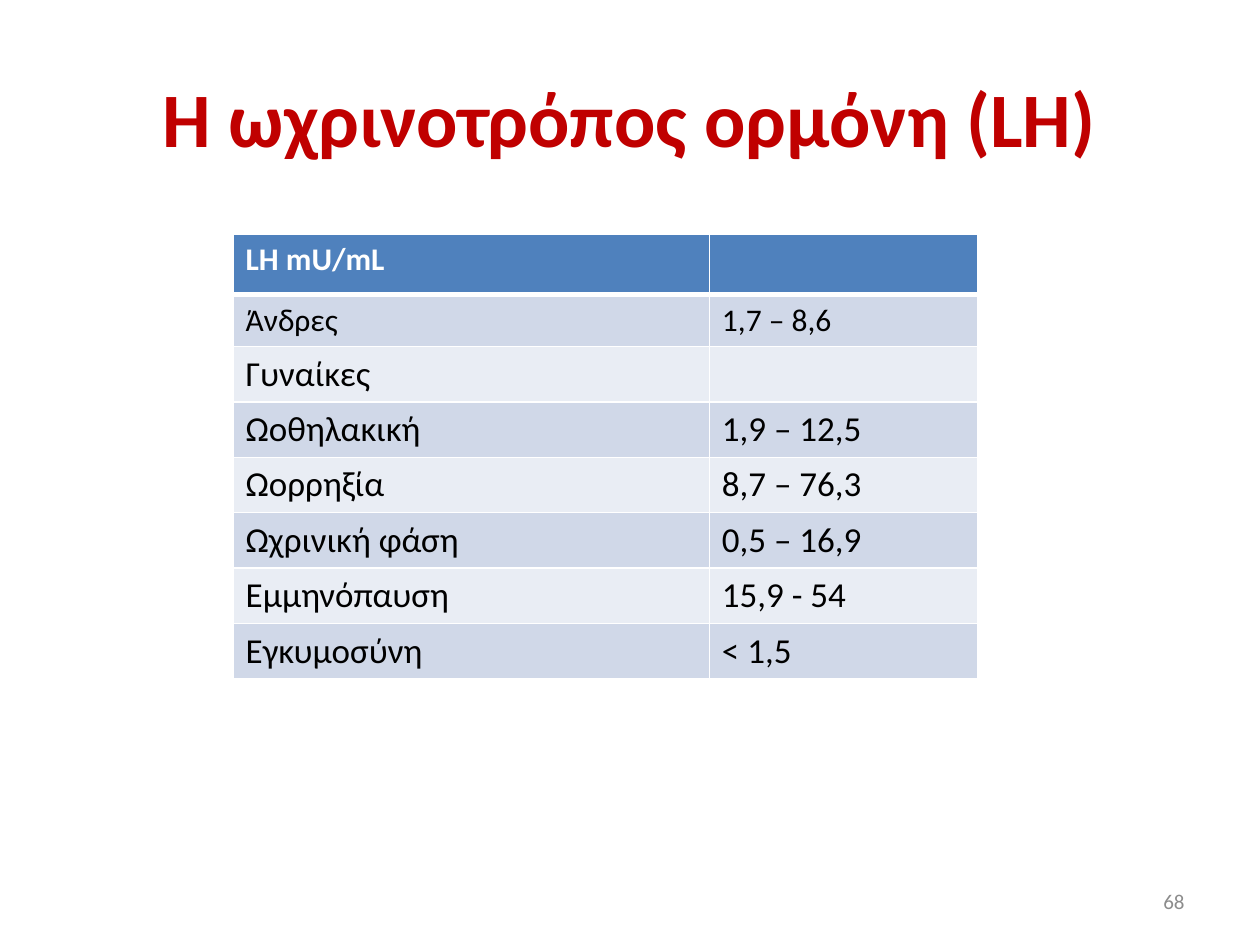
"""Build a slide with a table of LH reference values."""
from dataclasses import dataclass

from lxml.etree import SubElement
from pptx import Presentation
from pptx.dml.color import RGBColor
from pptx.enum.text import MSO_ANCHOR, PP_ALIGN
from pptx.oxml.ns import qn
from pptx.util import Inches, Pt

WIDTH, HEIGHT = Inches(10), Inches(7.5)
COLUMN_WIDTHS = (3.78, 2.13)
BANDS = ("E9EDF4", "D0D8E8")
HEADER_FILL, WHITE, BLACK = "4F81BD", "FFFFFF", "000000"


@dataclass(frozen=True)
class Row:
    label: str
    value: str = ""
    size: int = 20
    height: float = 0.44


ROWS = (
    Row("LH mU/mL", size=18, height=0.48),
    Row("Άνδρες", "1,7 – 8,6", size=18, height=0.41),
    Row("Γυναίκες"),
    Row("Ωοθηλακική", "1,9 – 12,5"),
    Row("Ωορρηξία", "8,7 – 76,3"),
    Row("Ωχρινική φάση", "0,5 – 16,9"),
    Row("Εμμηνόπαυση", "15,9 - 54"),
    Row("Εγκυμοσύνη", "< 1,5"),
)


def rgb(code: str) -> RGBColor:
    return RGBColor.from_string(code)


def write(frame, text: str, size: int, color: str, bold: bool = False, align=PP_ALIGN.LEFT) -> None:
    para = frame.paragraphs[0]
    para.alignment = align
    target = para.font
    if text:
        span = para.add_run()
        span.text = text
        target = span.font
    for name, value in {"name": "Calibri", "size": Pt(size), "bold": bold}.items():
        setattr(target, name, value)
    target.color.rgb = rgb(color)


def place(shape, left: float, top: float, width: float, height: float) -> None:
    geometry = {"left": left * WIDTH, "top": top * HEIGHT, "width": width * WIDTH, "height": height * HEIGHT}
    for name, value in geometry.items():
        setattr(shape, name, round(value))


def add_borders(cell, points: dict[str, int]) -> None:
    properties = cell._tc.get_or_add_tcPr()
    for position, (side, weight) in enumerate(points.items()):
        line = SubElement(properties, qn(f"a:ln{side}"), w=str(Pt(weight)))
        fill = SubElement(line, qn("a:solidFill"))
        SubElement(fill, qn("a:srgbClr"), val=WHITE)
        properties.insert(position, line)


def add_values(page) -> None:
    total = sum(row.height for row in ROWS)
    table = page.shapes.add_table(
        len(ROWS), len(COLUMN_WIDTHS), Inches(1.85), Inches(1.86),
        Inches(sum(COLUMN_WIDTHS)), Inches(total),
    ).table
    for column, width in zip(table.columns, COLUMN_WIDTHS):
        column.width = Inches(width)
    for index, row in enumerate(ROWS):
        table.rows[index].height = Inches(row.height)
        header = index == 0
        borders = {"L": 1, "R": 1, "T": 3 if index == 1 else 1, "B": 3 if header else 1}
        for cell, text in zip(table.rows[index].cells, (row.label, row.value)):
            cell.fill.solid()
            cell.fill.fore_color.rgb = rgb(HEADER_FILL if header else BANDS[index % 2])
            write(cell.text_frame, text, row.size, WHITE if header else BLACK, header)
            add_borders(cell, borders)


def main() -> None:
    deck = Presentation()
    deck.slide_width, deck.slide_height = WIDTH, HEIGHT
    page = deck.slides.add_slide(deck.slide_layouts[5])

    title = page.shapes.title
    place(title, 0.05, 0.04, 0.9, 1 / 6)
    title.text_frame.vertical_anchor = MSO_ANCHOR.MIDDLE
    write(title.text_frame, "H ωχρινοτρόπος ορμόνη (LH)", 44, "C00000", True, PP_ALIGN.CENTER)

    number = page.shapes.add_textbox(0, 0, 0, 0)
    place(number, 0.717, 0.927, 0.233, 0.053)
    number.text_frame.word_wrap = True
    number.text_frame.vertical_anchor = MSO_ANCHOR.MIDDLE
    write(number.text_frame, "68", 12, "8C8C8C", align=PP_ALIGN.RIGHT)

    add_values(page)
    deck.save("out.pptx")


if __name__ == "__main__":
    main()
